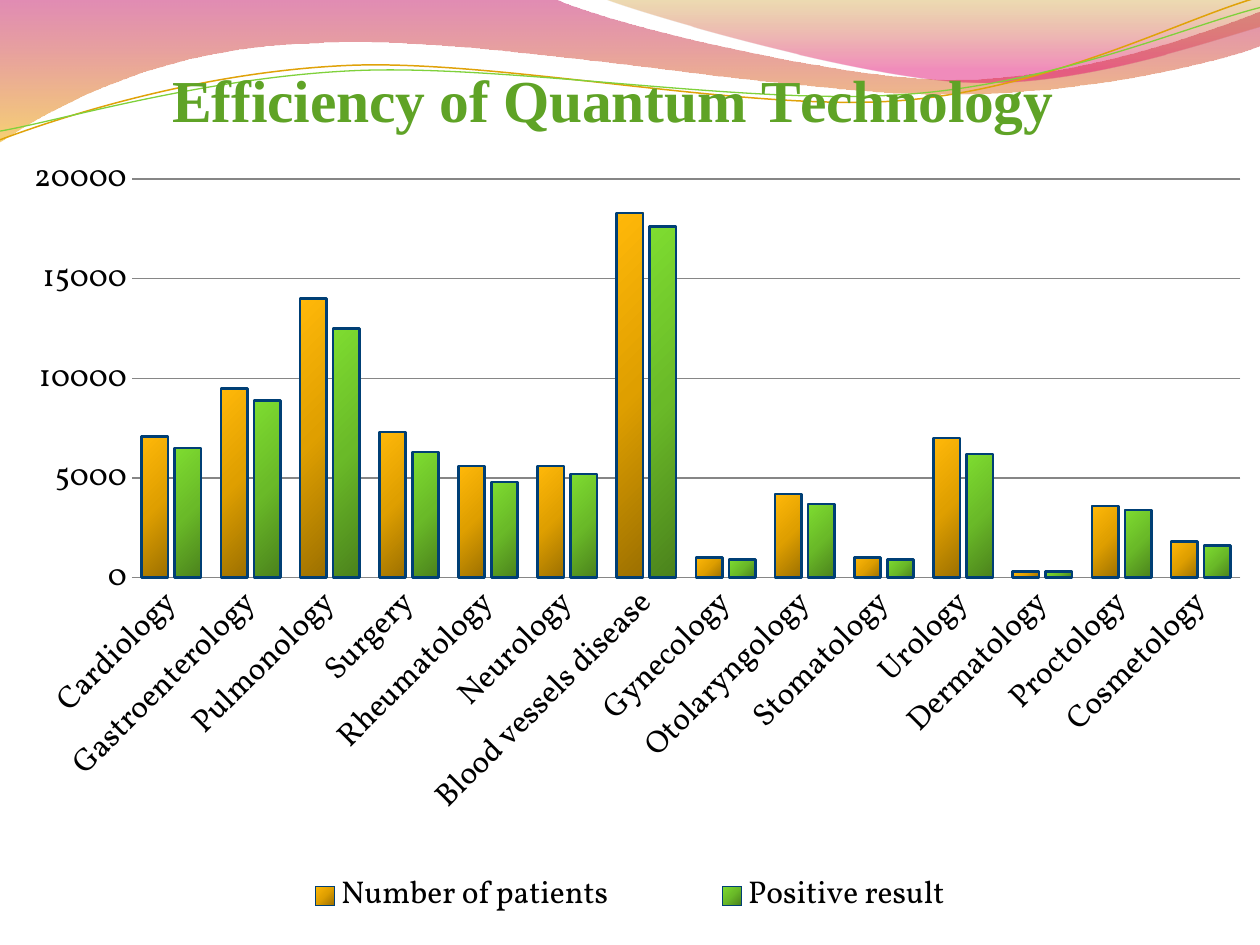
import pptx
import pptx.chart.data
import pptx.dml.color
import pptx.enum.chart
import pptx.oxml
import pptx.oxml.ns
import pptx.util

Pt = pptx.util.Pt
qn = pptx.oxml.ns.qn
NAMESPACES = pptx.oxml.ns.nsdecls("a", "c")
PAGE_WIDTH, PAGE_HEIGHT = 720, 540

# Outlines in points: a pair is a line's end, six numbers are a cubic curve
LOWER_WAVE = [
    (0, 0), (316.8, -0.7),
    (342.7, 12.2, 478.1, 45.4, 545.8, 45.4), (614.2, 45.4, 689.8, 18.7, 720, 6.5),
    (720.7, 25.9), (707.8, 31.7, 626.4, 54.7, 537.1, 54),
    (447.8, 54, 275, 20.2, 185, 24.5), (92.9, 25.9, 33.1, 59.8, -0.7, 81.4),
]
UPPER_WAVE = [
    (344.9, -0.7), (366.5, 7.9, 491, 44.6, 553.7, 46.8),
    (616.3, 49.7, 691.9, 23, 720, 15.1), (720, 0),
]
ORANGE_STRAND = [
    (0, 79.9), (34.6, 67, 113.8, 41, 199.4, 37.4),
    (284.4, 33.8, 427, 64.1, 513.4, 57.6), (599.8, 51.1, 675.4, 10.8, 718.6, -1.4),
]
GREEN_STRAND = [
    (0, 74.9), (33.8, 69.1, 118.1, 43.9, 203.8, 40.3),
    (290.2, 36.7, 429.8, 60.5, 516.2, 54), (601.9, 48.2, 677.5, 15.1, 720, 4.3),
]

# Clinic results: department, number of patients, positive result
RESULTS = [
    ("Cardiology", 7100, 6500), ("Gastroenterology", 9500, 8900),
    ("Pulmonology", 14000, 12500), ("Surgery", 7300, 6300),
    ("Rheumatology", 5600, 4800), ("Neurology", 5600, 5200),
    ("Blood vessels disease", 18300, 17600), ("Gynecology", 1000, 900),
    ("Otolaryngology", 4200, 3700), ("Stomatology", 1000, 900),
    ("Urology", 7000, 6200), ("Dermatology", 300, 300),
    ("Proctology", 3600, 3400), ("Cosmetology", 1800, 1600),
]
SERIES_GRADIENTS = [
    [(0, "9C7000", 100), (50, "DF9F00", 100), (100, "FFB809", 100)],
    [(0, "4B821C", 100), (50, "6ABA28", 100), (100, "7EDC30", 100)],
]


def colour(hex_text):
    return pptx.dml.color.RGBColor.from_string(hex_text)


def set_line(line, hex_text, width):
    line.color.rgb = colour(hex_text)
    line.width = Pt(width)


def set_font(font, name, size, hex_text, bold=False):
    font.name, font.size, font.bold = name, Pt(size), bold
    font.color.rgb = colour(hex_text)


def set_gradient(fill, properties, stops, angle):
    """Stops are (position %, colour, opacity %)."""
    fill.background()
    stop_xml = "".join(
        f'<a:gs pos="{position * 1000}"><a:srgbClr val="{hex_text}">'
        f'<a:alpha val="{opacity * 1000}"/></a:srgbClr></a:gs>'
        for position, hex_text, opacity in stops)
    gradient = pptx.oxml.parse_xml(
        f'<a:gradFill {NAMESPACES} rotWithShape="1"><a:gsLst>{stop_xml}</a:gsLst>'
        f'<a:lin ang="{angle * 60000}" scaled="0"/></a:gradFill>')
    properties.replace(properties.find(qn("a:noFill")), gradient)


def add_outline(page, outline, closed):
    """Frame all points as a freeform, then give its route lines and curves."""
    segments = [[(Pt(x), Pt(y)) for x, y in zip(segment[::2], segment[1::2])]
                for segment in outline]
    points = [point for segment in segments for point in segment]
    builder = page.shapes.build_freeform(*points[0])
    builder.add_line_segments(points[1:], close=closed)
    shape = builder.convert_to_shape()
    shape.shadow.inherit = False

    route = shape._element.spPr.find(".//" + qn("a:path"))
    for child in list(route):
        route.remove(child)
    for index, segment in enumerate(segments):
        tag = "moveTo" if index == 0 else "lnTo" if len(segment) == 1 else "cubicBezTo"
        places = "".join(f'<a:pt x="{x - shape.left}" y="{y - shape.top}"/>'
                         for x, y in segment)
        route.append(pptx.oxml.parse_xml(f"<a:{tag} {NAMESPACES}>{places}</a:{tag}>"))
    if closed:
        route.append(pptx.oxml.parse_xml(f"<a:close {NAMESPACES}/>"))
    return shape


def add_wave(page, outline, stops):
    shape = add_outline(page, outline, True)
    set_gradient(shape.fill, shape._element.spPr, stops, 90)
    shape.line.fill.background()


def add_strand(page, outline, hex_text, width):
    shape = add_outline(page, outline, False)
    shape.fill.background()
    set_line(shape.line, hex_text, width)


def set_layout(element, index, target="", **points):
    """Place a chart part, given in points on the page."""
    for old in element.findall(qn("c:layout")):
        element.remove(old)
    inner = f'<c:layoutTarget val="{target}"/>' if target else ""
    inner += "".join(f'<c:{key}Mode val="edge"/>' for key in ("x", "y"))
    for key, value in points.items():
        whole = PAGE_WIDTH if key in "xw" else PAGE_HEIGHT
        inner += f'<c:{key} val="{value / whole}"/>'
    element.insert(index, pptx.oxml.parse_xml(
        f"<c:layout {NAMESPACES}><c:manualLayout>{inner}</c:manualLayout></c:layout>"))


def style_axes(chart):
    ticks = pptx.enum.chart.XL_TICK_MARK
    for axis in (chart.category_axis, chart.value_axis):
        axis.major_tick_mark = axis.minor_tick_mark = ticks.NONE
        set_font(axis.tick_labels.font, "Vollkorn", 18, "000000")
    set_line(chart.category_axis.format.line, "868686", 0.75)
    labels = chart.category_axis._element.find(qn("c:txPr"))
    labels.find(qn("a:bodyPr")).set("rot", str(-45 * 60000))

    values = chart.value_axis
    values.minimum_scale, values.maximum_scale, values.major_unit = 0, 20000, 5000
    values.format.line.fill.background()
    values.has_major_gridlines = True
    set_line(values.major_gridlines.format.line, "868686", 0.75)


def add_results_chart(page, width, height):
    data = pptx.chart.data.CategoryChartData()
    departments, patients, positives = zip(*RESULTS)
    data.categories = departments
    data.add_series("Number of patients", patients)
    data.add_series("Positive result", positives)
    kind = pptx.enum.chart.XL_CHART_TYPE.COLUMN_CLUSTERED
    chart = page.shapes.add_chart(kind, 0, 0, width, height, data).chart
    set_font(chart.font, "Vollkorn", 18, "000000")
    style_axes(chart)

    # Columns
    plot = chart.plots[0]
    plot.gap_width, plot.overlap, plot.vary_by_categories = 75, -25, False
    for series, stops in zip(plot.series, SERIES_GRADIENTS):
        series_format = series.format
        series_format.fill.background()
        properties = series._element.find(qn("c:spPr"))
        set_gradient(series_format.fill, properties, stops, 225)
        set_line(series_format.line, "003F75", 1.5)
    set_layout(chart._chartSpace.chart.plotArea, 0, "inner", x=75.3, y=102.3, w=633.6, h=227.9)

    # Title
    chart.has_title = True
    title = chart.chart_title
    para = title.text_frame.paragraphs[0]
    para.text = "Efficiency of Quantum Technology"
    set_font(para.runs[0].font, "Times New Roman", 34, "5FA326", True)
    set_layout(title._element, 1, x=92.4, y=29.6)

    # Legend
    chart.has_legend = True
    legend = chart.legend
    legend.position = pptx.enum.chart.XL_LEGEND_POSITION.BOTTOM
    legend.include_in_layout = False
    set_font(legend.font, "Vollkorn", 18, "000000")
    set_layout(legend._element, 1, x=121, y=495.8, w=478, h=32.4)


def main():
    deck = pptx.Presentation()
    deck.slide_width, deck.slide_height = Pt(PAGE_WIDTH), Pt(PAGE_HEIGHT)
    page = deck.slides.add_slide(deck.slide_layouts[6])

    # Waves and strands along the top
    add_wave(page, LOWER_WAVE, [(0, "BD0059", 45), (100, "F0AB00", 55)])
    add_wave(page, UPPER_WAVE, [(0, "C38B00", 30), (80, "E1006B", 45)])
    add_strand(page, ORANGE_STRAND, "E0A209", 0.85)
    add_strand(page, GREEN_STRAND, "7FD13B", 0.75)

    add_results_chart(page, deck.slide_width, deck.slide_height)
    deck.save("out.pptx")


if __name__ == "__main__":
    main()
